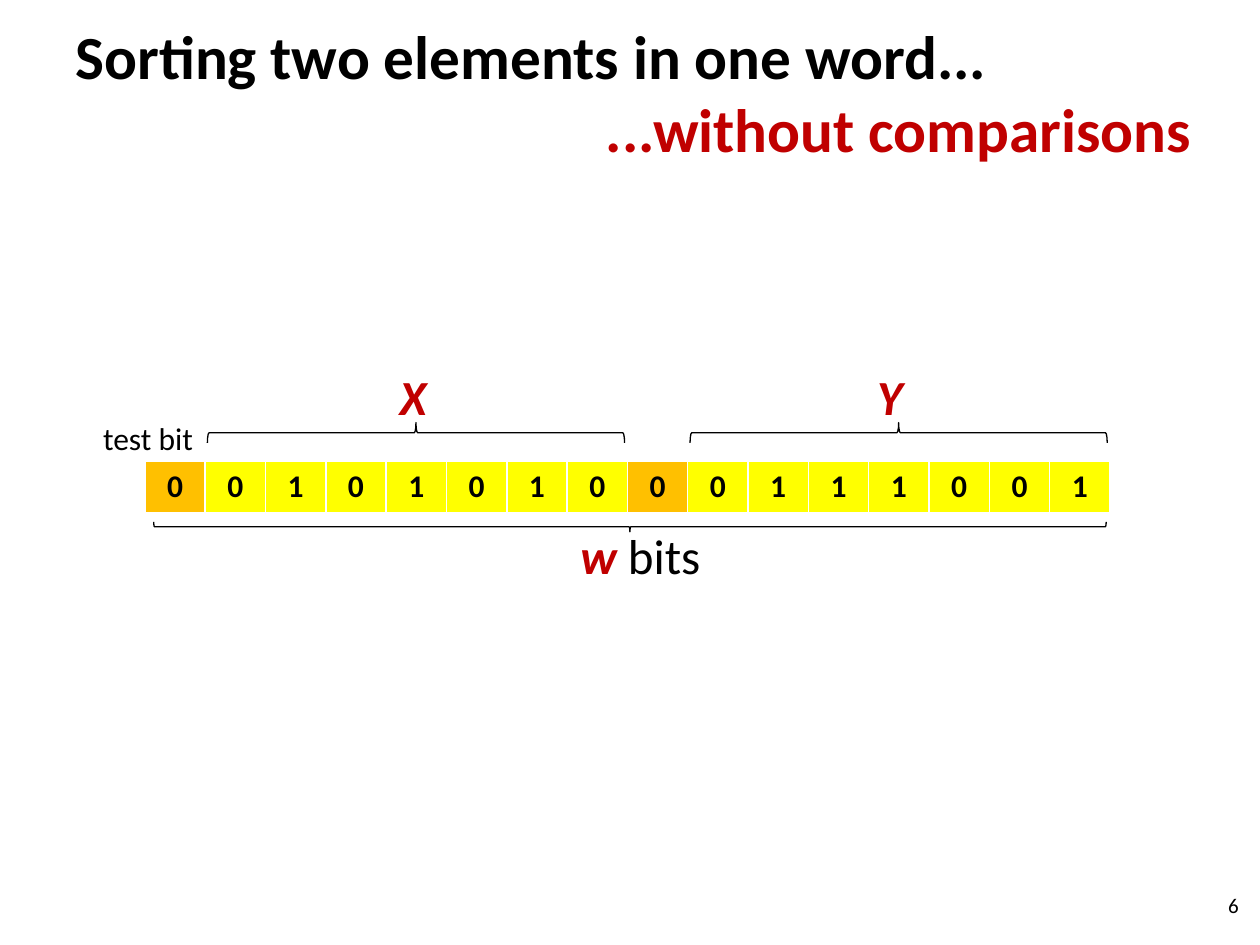
from pptx import Presentation
from pptx import util as u
from pptx.dml import color
from pptx.enum import shapes, text

BLACK, RED, ORANGE, YELLOW = "000000", "C00000", "FFC000", "FFFF00"
WORD = "0010101000111001"
ELEMENT_BITS = 8
LEFT, CENTER, RIGHT = text.PP_ALIGN.LEFT, text.PP_ALIGN.CENTER, text.PP_ALIGN.RIGHT


def rgb(value):
    return color.RGBColor.from_string(value)


class SlideBuilder:
    font_name = "Calibri"

    def __init__(self, slide):
        self.slide = slide

    def style(self, font, size, ink=BLACK, bold=False, italic=False):
        font.name, font.size = self.font_name, u.Pt(size)
        font.bold, font.italic = bold, italic
        font.color.rgb = rgb(ink)

    def title(self, box, lines, size, right_inset):
        """Fill the title with one paragraph per (words, ink, alignment)."""
        shape = self.slide.shapes.title
        shape.left, shape.top, shape.width, shape.height = map(u.Cm, box)
        frame = shape.text_frame
        frame.text = "\n".join(words for words, _, _ in lines)
        frame.auto_size = text.MSO_AUTO_SIZE.NONE
        frame.vertical_anchor = text.MSO_ANCHOR.MIDDLE
        frame.margin_right = u.Cm(right_inset)
        for paragraph, (_, ink, alignment) in zip(frame.paragraphs, lines):
            paragraph.alignment = alignment
            paragraph.space_before = u.Pt(0)
            self.style(paragraph.font, size, ink, bold=True)

    def label(self, box, words, size, alignment, variable="", anchor=text.MSO_ANCHOR.TOP):
        """Add a text box; the variable name comes first, in red bold italics."""
        frame = self.slide.shapes.add_textbox(*map(u.Cm, box)).text_frame
        frame.word_wrap = True
        frame.vertical_anchor = anchor
        paragraph = frame.paragraphs[0]
        paragraph.alignment = alignment
        if variable:
            run = paragraph.add_run()
            run.text = variable
            self.style(run.font, size, RED, bold=True, italic=True)
        if words:
            run = paragraph.add_run()
            run.text = words
            self.style(run.font, size)

    def brace(self, left, top, width, height, rotation):
        """Add a horizontal brace; 90 degrees points up, 270 points down."""
        x = left + (width - height) / 2
        y = top + (height - width) / 2
        shape = self.slide.shapes.add_shape(
            shapes.MSO_SHAPE.LEFT_BRACE, *map(u.Cm, (x, y, height, width)))
        shape.rotation = rotation
        shape.shadow.inherit = False
        shape.fill.background()
        shape.line.color.rgb = rgb(BLACK)
        shape.line.width = u.Pt(0.75)

    def bit_table(self, box, bits, size):
        """Add one row of bits, with the test bit of each element in orange."""
        table = self.slide.shapes.add_table(1, len(bits), *map(u.Cm, box)).table
        for index, bit in enumerate(bits):
            table.columns[index].width = u.Cm(box[2] / len(bits))
            cell = table.cell(0, index)
            cell.text = bit
            cell.fill.solid()
            cell.fill.fore_color.rgb = rgb(YELLOW if index % ELEMENT_BITS else ORANGE)
            paragraph = cell.text_frame.paragraphs[0]
            paragraph.alignment = CENTER
            self.style(paragraph.font, size, bold=True)


def main():
    presentation = Presentation()
    presentation.slide_width, presentation.slide_height = u.Cm(25.4), u.Cm(19.05)
    title_only = presentation.slide_layouts[5]
    builder = SlideBuilder(presentation.slides.add_slide(title_only))

    builder.title((1.27, 0.76, 24.13, 2.16),
                  [("Sorting two elements in one word...", BLACK, LEFT),
                   ("...without comparisons", RED, RIGHT)],
                  size=35, right_inset=1.37)
    builder.label((19.3, 17.73, 5.92, 1.02), "6", 12, RIGHT,
                  anchor=text.MSO_ANCHOR.MIDDLE)

    builder.bit_table((2.92, 9.3, 19.46, 1.04), WORD, 18)
    for variable, brace_left, label_left in (("X", 4.18, 5.33), ("Y", 13.91, 14.94)):
        builder.brace(brace_left, 8.52, 8.41, 0.41, rotation=90)
        builder.label((label_left, 7.26, 6, 1.45), "", 28, CENTER, variable)
    builder.label((0.51, 8.33, 3.63, 1.02), "test bit", 18, RIGHT)
    builder.brace(3.1, 10.52, 19.2, 0.2, rotation=270)
    builder.label((9.91, 10.46, 6, 1.45), " bits", 28, CENTER, "w")

    presentation.save("out.pptx")


if __name__ == "__main__":
    main()
